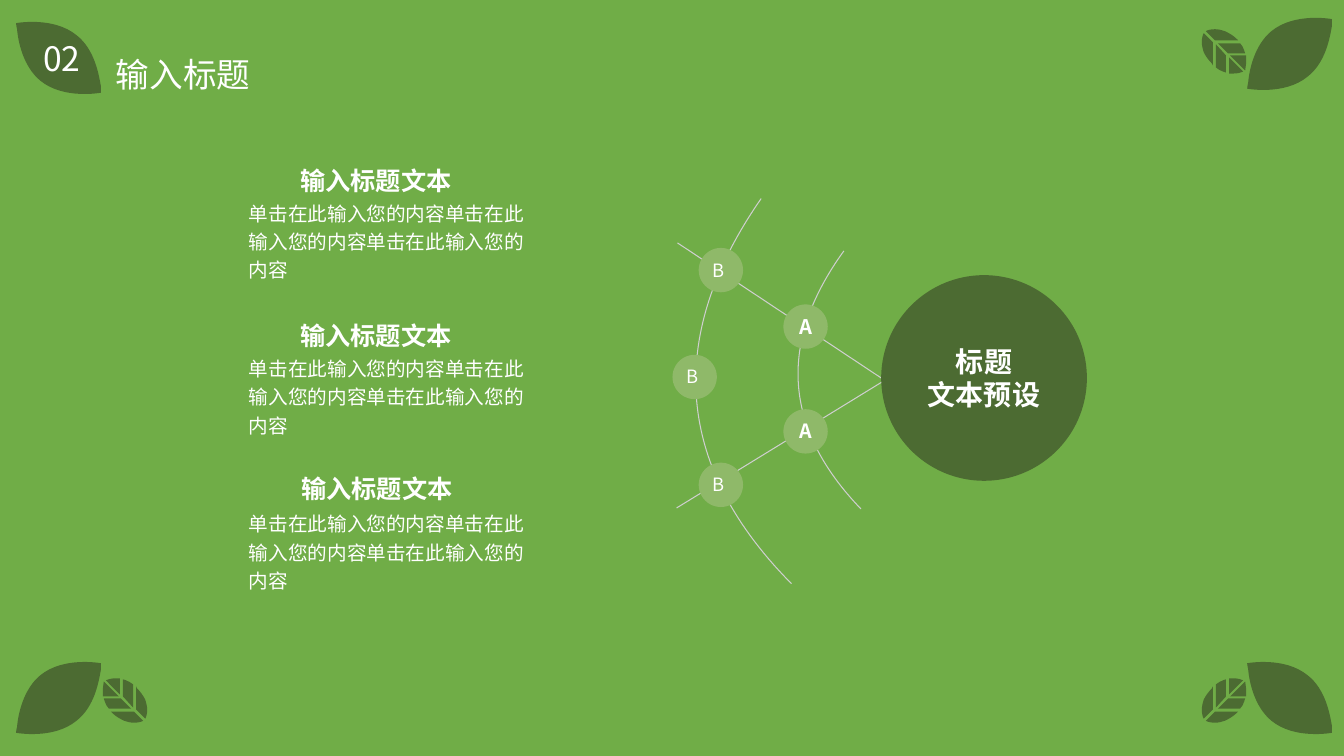
from pptx import Presentation
from pptx.dml.color import RGBColor
from pptx.enum.shapes import MSO_CONNECTOR as Link, MSO_SHAPE as Kind
from pptx.enum.text import MSO_ANCHOR as Anchor, PP_ALIGN as Align
from pptx.enum.text import MSO_AUTO_SIZE as Fit
from pptx.oxml.ns import qn
from pptx.util import Inches, Pt
from lxml.etree import SubElement

# Content
TITLE, NUMBER = "输入标题", "02"
CENTER = "标题\v文本预设"
BODY = "单击在此输入您的内容" * 3
ITEMS = [  # heading, left, top, body, top
    ("输入标题文本", 2.88, 1.59, BODY, 2.02),
    ("输入标题文本", 2.88, 3.13, BODY, 3.56),
    ("输入标题文本", 2.89, 4.65, BODY, 5.1),
]
A_LOOK = dict(bold=True, align=Align.CENTER)
DOTS = [  # letter, left, top, letter shift, size, format
    ("A", 7.77, 3.02, 0.05, 14.4, A_LOOK),
    ("A", 7.77, 4.06, 0.05, 14, A_LOOK),
    ("B", 6.93, 2.46, 0.11, 13.1, {}),
    ("B", 6.67, 3.52, 0.11, 13.1, {}),
    ("B", 6.93, 4.59, 0.11, 13.1, {}),
]

# Look
FONT = "Noto Sans CJK SC"
GREEN = RGBColor(0x70, 0xAD, 0x47)
DARK = RGBColor(0x4C, 0x6B, 0x32)
PALE = RGBColor(0x8F, 0xB9, 0x69)
GRAY = RGBColor(0xCF, 0xCF, 0xCF)
WHITE = RGBColor(0xFF, 0xFF, 0xFF)

# Outlines: a pair is a corner, six numbers are a Bezier curve
ARCS = [
    [(8.54, 5.05), (7.77, 4.25, 7.71, 3.4, 8.37, 2.49)],
    [(7.85, 5.79), (6.7, 4.63, 6.59, 3.35, 7.55, 1.97)],
]
RAYS = [(6.72, 2.41, 8.77, 3.77), (8.78, 3.77, 6.71, 5.04)]
LEAF_MID = (0.58, 0.58)
LEAF = [[
    (1, 0.92), (1, 0.92, 1, 0.89, 1, 0.85),
    (0.98, 0.74, 0.94, 0.49, 0.76, 0.35),
    (0.53, 0.16, 0.16, 0.23, 0.16, 0.23),
    (0.16, 0.23, 0.16, 0.25, 0.17, 0.29),
    (0.18, 0.41, 0.23, 0.66, 0.4, 0.8),
    (0.63, 0.99, 1, 0.92, 1, 0.92),
]]
SPRIG_MID = (1.24, 6.95)
SPRIG = [
    [(1.35, 7.04), (1.35, 6.81), (1.35, 6.82, 1.36, 6.82, 1.36, 6.83),
     (1.39, 6.86, 1.42, 6.9, 1.44, 6.94),
     (1.45, 6.97, 1.46, 7.01, 1.46, 7.04),
     (1.46, 7.08, 1.45, 7.12, 1.44, 7.13)],
    [(1.22, 6.91), (1.22, 6.74), (1.23, 6.74, 1.24, 6.75, 1.25, 6.75),
     (1.27, 6.76, 1.3, 6.77, 1.32, 6.79), (1.32, 7.02)],
    [(1.1, 7.06), (1.33, 7.06), (1.42, 7.15),
     (1.41, 7.16, 1.37, 7.17, 1.33, 7.17),
     (1.29, 7.17, 1.26, 7.16, 1.23, 7.15),
     (1.19, 7.13, 1.15, 7.11, 1.11, 7.07),
     (1.11, 7.07, 1.11, 7.06, 1.1, 7.06)],
    [(1.05, 6.75), (1.07, 6.74, 1.1, 6.73, 1.15, 6.73),
     (1.16, 6.73, 1.18, 6.73, 1.19, 6.73), (1.19, 6.89)],
    [(1.03, 6.93), (1.2, 6.93), (1.3, 7.03), (1.08, 7.03),
     (1.06, 7.01, 1.05, 6.99, 1.04, 6.96),
     (1.03, 6.95, 1.03, 6.94, 1.03, 6.93)],
    [(1.02, 6.86), (1.02, 6.81, 1.03, 6.78, 1.03, 6.76), (1.18, 6.91),
     (1.02, 6.91), (1.02, 6.89, 1.02, 6.87, 1.02, 6.86)],
]
CORNERS = [  # outline, its middle, new middle, mirror x, mirror y
    (LEAF, LEAF_MID, (0.58, 0.58), 1, 1),
    (LEAF, LEAF_MID, (0.58, 6.92), 1, -1),
    (LEAF, LEAF_MID, (12.79, 6.93), 1, 1),
    (LEAF, LEAF_MID, (12.79, 0.53), 1, -1),
    (SPRIG, SPRIG_MID, (1.24, 6.95), 1, 1),
    (SPRIG, SPRIG_MID, (12.14, 6.95), -1, 1),
    (SPRIG, SPRIG_MID, (12.14, 0.51), -1, -1),
]

deck = Presentation()
deck.slide_width, deck.slide_height = Inches(13.33), Inches(7.5)
slide = deck.slides.add_slide(deck.slide_layouts[5])
shapes = slide.shapes
slide.background.fill.solid()
slide.background.fill.fore_color.rgb = GREEN


def write(shape, text, size=14, bold=False, align=Align.LEFT,
          anchor=Anchor.TOP, wrap=True, inset=None, space=1.0, fit=Fit.NONE):
    frame = shape.text_frame
    frame.auto_size = fit
    frame.word_wrap, frame.vertical_anchor = wrap, anchor
    if inset is not None:
        frame.margin_left = frame.margin_right = Inches(inset)
        frame.margin_top = frame.margin_bottom = Inches(inset)
    para = frame.paragraphs[0]
    para.text = text
    para.alignment, para.line_spacing = align, space
    for run in para.runs:
        font = run.font
        font.size, font.bold, font.name = Pt(size), bold, FONT
        font.color.rgb = WHITE
        SubElement(font._element, qn("a:ea"), typeface=FONT)


def box(x, y, w, h):
    return shapes.add_textbox(*map(Inches, (x, y, w, h)))


def paint(shape, color):
    shape.shadow.inherit = False
    shape.fill.solid()
    shape.fill.fore_color.rgb = color
    shape.line.fill.background()


def disc(x, y, size, color):
    shape = shapes.add_shape(Kind.OVAL, *map(Inches, (x, y, size, size)))
    paint(shape, color)
    return shape


def trace(part, steps=20):
    """Sample the outline, to find the frame that holds it."""
    points = []
    for step in part:
        if len(step) == 2:
            points.append(step)
            continue
        a, b, c, d = points[-1], step[:2], step[2:4], step[4:]
        for i in range(1, steps + 1):
            t = i / steps
            u = 1 - t
            points.append(tuple(
                u**3 * p + 3 * u * u * t * q + 3 * u * t * t * r + t**3 * s
                for p, q, r, s in zip(a, b, c, d)))
    return points


def draw(parts, close):
    spots = [(Inches(x), Inches(y)) for part in parts for x, y in trace(part)]
    pen = shapes.build_freeform(*spots[0], scale=1.0)
    pen.add_line_segments(spots[1:], close=close)
    shape = pen.convert_to_shape()
    # Put true curves in the frame
    route = next(shape._element.iter(qn("a:path")))
    for node in list(route):
        route.remove(node)
    for part in parts:
        for i, step in enumerate(part):
            tag = "cubicBezTo" if len(step) == 6 else "lnTo" if i else "moveTo"
            node = SubElement(route, qn("a:" + tag))
            for x, y in zip(step[::2], step[1::2]):
                SubElement(node, qn("a:pt"), x=str(Inches(x) - shape.left),
                           y=str(Inches(y) - shape.top))
        if close:
            SubElement(route, qn("a:close"))
    return shape


def stroke(shape):
    shape.line.color.rgb = GRAY
    shape.line.width = Pt(0.75)


# Arcs and rays
for arc in ARCS:
    curve = draw([arc], False)
    curve.shadow.inherit = False
    curve.fill.background()
    stroke(curve)
for ray in RAYS:
    line = shapes.add_connector(Link.STRAIGHT, *map(Inches, ray))
    stroke(line)
    SubElement(line._element.spPr, qn("a:effectLst"))

# Lettered dots and the large circle
for letter, x, y, shift, size, look in DOTS:
    disc(x, y, 0.44, PALE)
    write(box(x + shift, y + 0.09, 0.34, 0.25), letter, size=size,
          anchor=Anchor.MIDDLE, inset=0.03, **look)
write(disc(8.74, 2.73, 2.04, DARK), CENTER, size=20, bold=True,
      align=Align.CENTER, anchor=Anchor.MIDDLE, wrap=False, inset=0.02)

# Text items
for head, x, y, body, low in ITEMS:
    write(box(2.37, low, 3.09, 0.71), body, anchor=Anchor.MIDDLE, space=1.2)
    write(box(x, y, 2.6, 0.46), head, size=18, bold=True)

# Corner leaves
for parts, mid, new, sx, sy in CORNERS:
    signs = (sx, sy) * 3
    moved = [[tuple(n + s * (v - m)
                    for v, m, n, s in zip(step, mid * 3, new * 3, signs))
              for step in part] for part in parts]
    paint(draw(moved, True), DARK)

# Title and number
title = shapes.title
title.left, title.top = Inches(1.05), Inches(0.48)
title.width, title.height = Inches(1.55), Inches(0.5)
write(title, TITLE, size=24, wrap=False, fit=Fit.SHAPE_TO_FIT_TEXT)
write(box(0.33, 0.33, 0.6, 0.5), NUMBER, size=24, wrap=False,
      fit=Fit.SHAPE_TO_FIT_TEXT)

deck.save("out.pptx")
